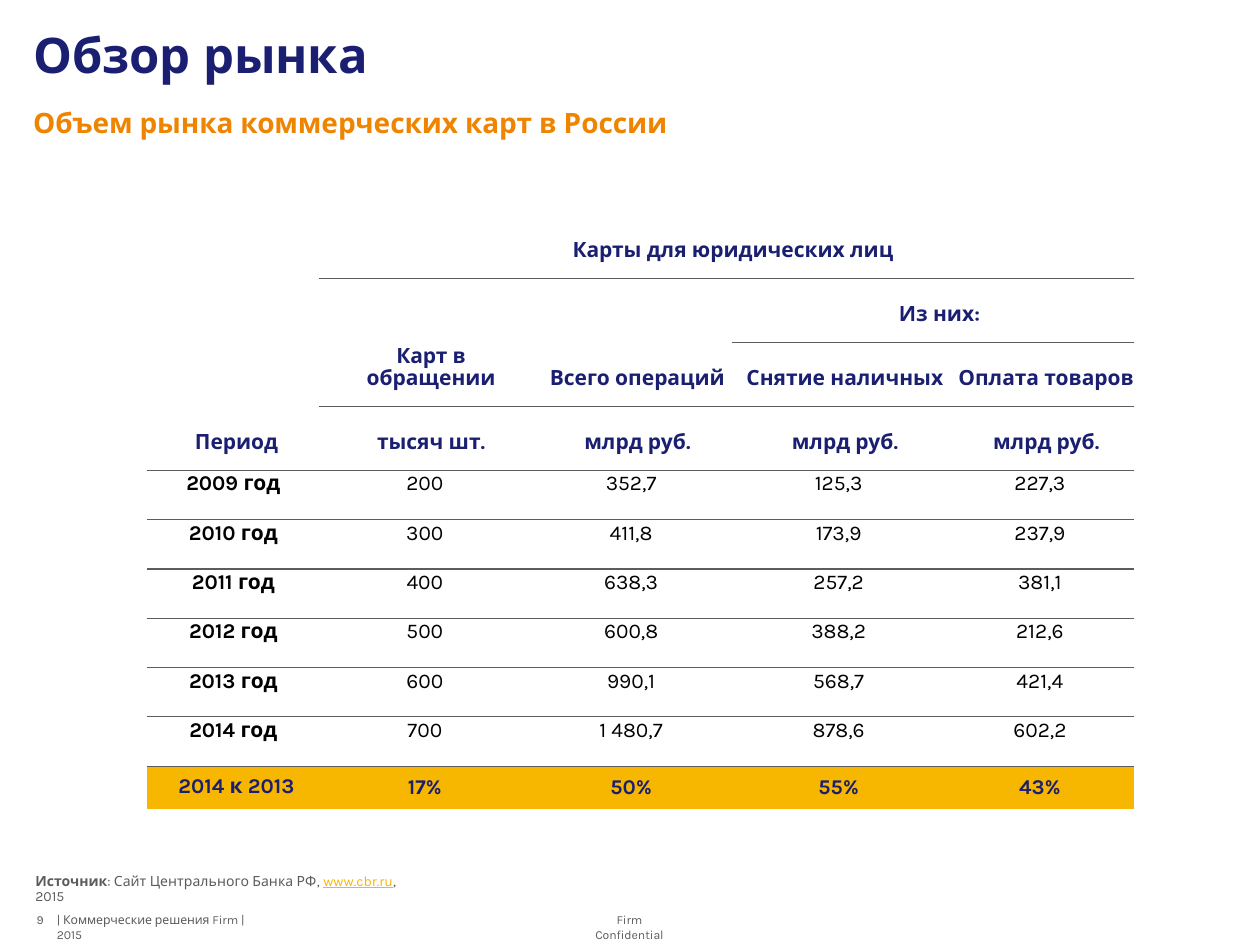
from lxml.etree import SubElement
from pptx import Presentation
from pptx.dml.color import RGBColor
from pptx.enum.text import MSO_ANCHOR as Anchor, MSO_AUTO_SIZE as AutoSize, PP_ALIGN as Align
from pptx.oxml.ns import qn
from pptx.util import Pt

FONT = "Karla"
NAVY, ORANGE, GOLD = "1A1F71", "EF8400", "F7B600"
GREY, BLACK, WHITE = "5C5C5C", "000000", "FFFFFF"

TITLE = "Обзор рынка"
SUBTITLE = "Объем рынка коммерческих карт в России"
SOURCE = [
    ("Источник", True, False, GREY),
    (": Сайт Центрального Банка РФ, ", False, False, GREY),
    ("www.cbr.ru", False, True, GOLD),
    (", 2015", False, False, GREY),
]
FOOTERS = [
    ("| Коммерческие решения Firm | 2015", 32.5, 115, Align.LEFT),
    ("9", 20.9, 9, Align.LEFT),
    ("Firm Confidential", 333.4, 52.6, Align.CENTER),
]
HEADERS = [
    ["Период", "Карты для юридических лиц", "", "", ""],
    ["", "Карт в обращении", "Всего операций", "Из них:", ""],
    ["", "", "", "Снятие наличных", "Оплата товаров"],
    ["", "тысяч шт.", "млрд руб.", "млрд руб.", "млрд руб."],
]
YEARS = [
    ["2009 год", "200", "352,7", "125,3", "227,3"],
    ["2010 год", "300", "411,8", "173,9", "237,9"],
    ["2011 год", "400", "638,3", "257,2", "381,1"],
    ["2012 год", "500", "600,8", "388,2", "212,6"],
    ["2013 год", "600", "990,1", "568,7", "421,4"],
    ["2014 год", "700", "1 480,7", "878,6", "602,2"],
]
GROWTH = ["2014 к 2013", "17%", "50%", "55%", "43%"]
MERGES = [((0, 0), (3, 0)), ((0, 1), (0, 4)), ((1, 1), (2, 1)),
          ((1, 2), (2, 2)), ((1, 3), (1, 4))]
COLUMN_WIDTHS = [98.3, 120.6, 115.2, 122, 108]
ROW_HEIGHTS = [36.6] * len(HEADERS) + [28.2] * len(YEARS) + [24.2]
NO_GRID_STYLE = "{2D5ABB26-0587-4C30-8999-92F81FD0307C}"


def rgb(hex_color):
    return RGBColor.from_string(hex_color)


def format_paragraph(paragraph, size, color, bold=False, align=Align.LEFT, spacing=None):
    paragraph.alignment = align
    if spacing:
        paragraph.line_spacing = spacing
    font = paragraph.font
    font.name, font.size, font.bold = FONT, Pt(size), bold
    font.color.rgb = rgb(color)


def set_margins(holder, left, top, right, bottom):
    holder.margin_left, holder.margin_top = Pt(left), Pt(top)
    holder.margin_right, holder.margin_bottom = Pt(right), Pt(bottom)


def prepare_frame(shape, anchor=Anchor.TOP):
    frame = shape.text_frame
    frame.word_wrap, frame.auto_size = True, AutoSize.NONE
    frame.vertical_anchor = anchor
    set_margins(frame, 0, 0, 0, 0)
    return frame.paragraphs[0]


def add_text(slide, left, top, width, height, anchor=Anchor.TOP):
    box = slide.shapes.add_textbox(Pt(left), Pt(top), Pt(width), Pt(height))
    return prepare_frame(box, anchor)


def add_border(cell, edge):
    properties = cell._tc.get_or_add_tcPr()
    line = SubElement(properties, qn(f"a:{edge}"), w=str(Pt(0.75)))
    fill = SubElement(line, qn("a:solidFill"))
    SubElement(fill, qn("a:srgbClr"), val=GREY)
    properties.insert(0, line)


def fill_cell(cell, row, column, text):
    is_header = row < len(HEADERS)
    is_growth = row == len(ROW_HEIGHTS) - 1
    is_label = column == 0
    cell.text = text
    paragraph = cell.text_frame.paragraphs[0]
    format_paragraph(
        paragraph, 12, NAVY if is_header or is_growth else BLACK,
        is_header or is_growth or is_label, Align.CENTER,
        0.9 if is_header or (is_growth and is_label) else None)
    if is_header:
        cell.vertical_anchor = Anchor.BOTTOM
        set_margins(cell, 7.2, 9.4, 3.6 if is_label else 0, 9.4)
    else:
        cell.vertical_anchor = Anchor.MIDDLE if is_growth else Anchor.TOP
        set_margins(cell, 0.7, 0.7, 0.7, 0)
    if is_growth and is_label:
        set_margins(cell, 7.2, 5, 3.6, 5)
        paragraph.space_after = Pt(2)
    cell.fill.solid()
    cell.fill.fore_color.rgb = rgb(GOLD if is_growth else WHITE)
    last_row = row + (cell.span_height if cell.is_merge_origin else 1) - 1
    if last_row < len(ROW_HEIGHTS) - 2:
        add_border(cell, "lnB")
    if row > 0 and not is_growth:
        add_border(cell, "lnT")


def add_market_table(slide):
    rows = HEADERS + YEARS + [GROWTH]
    table = slide.shapes.add_table(
        len(rows), len(COLUMN_WIDTHS), Pt(84.2), Pt(122.4),
        Pt(sum(COLUMN_WIDTHS)), Pt(sum(ROW_HEIGHTS))).table
    table.first_row = table.horz_banding = False
    table._tbl.tblPr.find(qn("a:tableStyleId")).text = NO_GRID_STYLE
    for column, width in zip(table.columns, COLUMN_WIDTHS):
        column.width = Pt(width)
    for row, height in zip(table.rows, ROW_HEIGHTS):
        row.height = Pt(height)
    for first, last in MERGES:
        table.cell(*first).merge(table.cell(*last))
    for r, texts in enumerate(rows):
        for c, text in enumerate(texts):
            cell = table.cell(r, c)
            if not cell.is_spanned:
                fill_cell(cell, r, c, text)


def main():
    deck = Presentation()
    deck.slide_width, deck.slide_height = Pt(720), Pt(540)
    slide = deck.slides.add_slide(deck.slide_layouts[5])

    title = slide.shapes.title
    title.left, title.top, title.width, title.height = Pt(19), Pt(19.4), Pt(684), Pt(28.8)
    heading = prepare_frame(title)
    heading.text = TITLE
    format_paragraph(heading, 28, NAVY, True, spacing=0.85)

    subtitle = add_text(slide, 19, 62.6, 684, 17.3)
    subtitle.text = SUBTITLE
    format_paragraph(subtitle, 16, ORANGE, True, spacing=0.9)

    add_market_table(slide)

    source = add_text(slide, 20.2, 508.3, 216.7, 8.6, Anchor.BOTTOM)
    format_paragraph(source, 8, GREY, spacing=0.9)
    for text, bold, underline, color in SOURCE:
        run = source.add_run()
        run.text = text
        run.font.bold, run.font.underline = bold, underline
        run.font.color.rgb = rgb(color)

    for text, left, width, align in FOOTERS:
        footer = add_text(slide, left, 521.3, width, 8.6)
        footer.text = text
        format_paragraph(footer, 7, GREY, align=align)

    deck.save("out.pptx")


if __name__ == "__main__":
    main()
